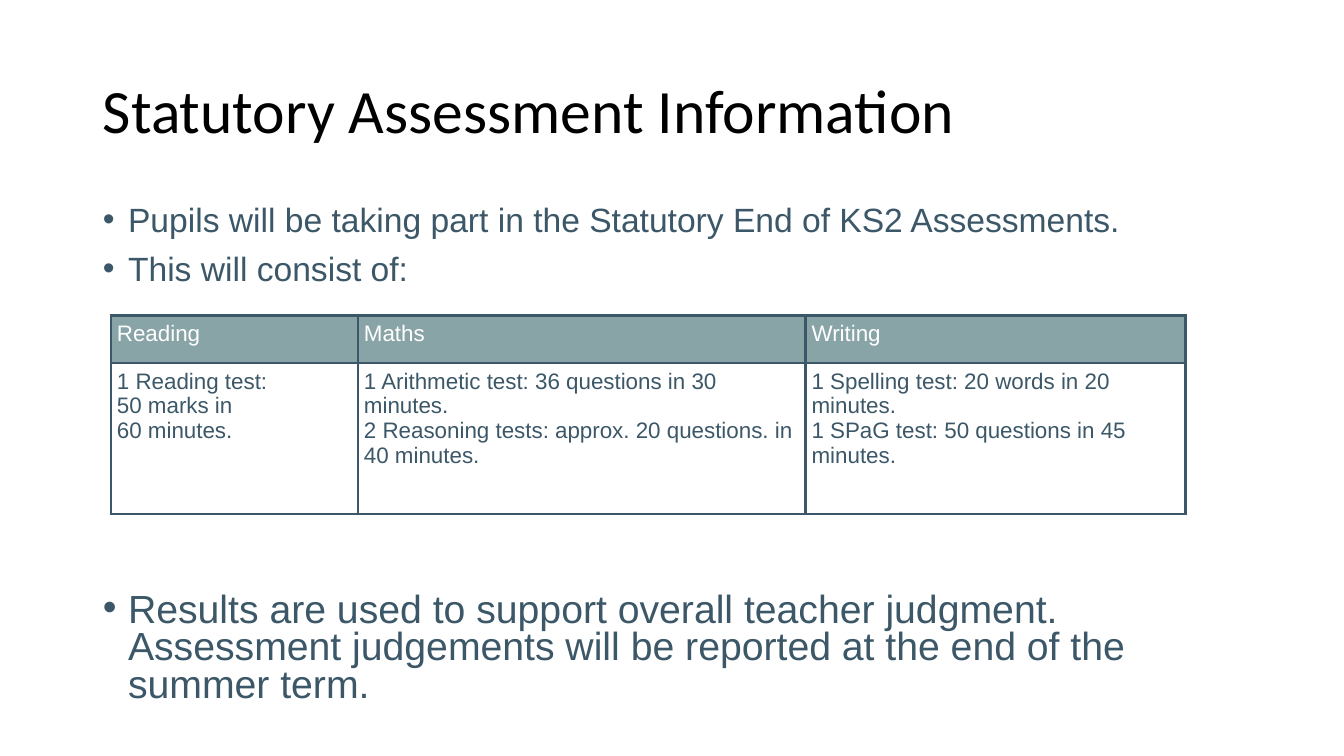
from lxml.etree import SubElement
from pptx import Presentation
from pptx.dml.color import RGBColor
from pptx.enum.text import MSO_ANCHOR, MSO_AUTO_SIZE, PP_ALIGN
from pptx.oxml.ns import qn
from pptx.util import Emu, Pt

EMU_PER_PX = 9144
BLACK = RGBColor(0x00, 0x00, 0x00)
WHITE = RGBColor(0xFF, 0xFF, 0xFF)
SLATE = RGBColor(0x3C, 0x58, 0x68)
SAGE = RGBColor(0x89, 0xA4, 0xA7)

TITLE = "Statutory Assessment Information"
BULLETS = [
    ("Pupils will be taking part in the Statutory End of KS2 Assessments.", 24, 12),
    ("This will consist of:", 24, 12),
    ("Results are used to support overall teacher judgment. Assessment judgements "
     "will be reported at the end of the summer term.", 28, 218),
]
SUBJECTS = [
    ("Reading", 245, ["1 Reading test:", "50 marks in", "60 minutes."]),
    ("Maths", 444, ["1 Arithmetic test: 36 questions in 30 minutes.",
                    "2 Reasoning tests: approx. 20 questions. in 40 minutes."]),
    ("Writing", 377, ["1 Spelling test: 20 words in 20 minutes.",
                      "1 SPaG test: 50 questions in 45 minutes."]),
]
ROW_HEIGHTS = [47, 150]


def px(length):
    return Emu(length * EMU_PER_PX)


def place(placeholder, left, top, width, height):
    placeholder.left, placeholder.top = px(left), px(top)
    placeholder.width, placeholder.height = px(width), px(height)
    placeholder.text_frame.auto_size = MSO_AUTO_SIZE.NONE


def add_run(paragraph, text, size, color, font="Arial"):
    run = paragraph.add_run()
    run.text = text
    run.font.name = font
    run.font.size = Pt(size)
    run.font.bold = False
    run.font.color.rgb = color


def write_title(title):
    place(title, 92, 40, 1150, 145)
    title.text_frame.vertical_anchor = MSO_ANCHOR.MIDDLE
    heading = title.text_frame.paragraphs[0]
    heading.alignment = PP_ALIGN.LEFT
    heading.line_spacing = 0.9
    add_run(heading, TITLE, 44, BLACK, "Calibri")


def write_bullets(body):
    place(body, 92, 200, 1150, 476)
    frame = body.text_frame
    for index, (text, size, space_before) in enumerate(BULLETS):
        bullet = frame.add_paragraph() if index else frame.paragraphs[0]
        bullet.line_spacing = 0.8
        bullet.space_before = Pt(space_before)
        properties = bullet._p.get_or_add_pPr()
        properties.set("marL", str(px(25)))
        properties.set("indent", str(px(-25)))
        SubElement(properties, qn("a:buFont"), typeface="Arial")
        SubElement(properties, qn("a:buChar"), char="•")
        add_run(bullet, text, size, SLATE)


def add_borders(cell):
    properties = cell._tc.get_or_add_tcPr()
    for side in ("lnL", "lnR", "lnT", "lnB"):
        border = SubElement(properties, qn(f"a:{side}"), w=str(Pt(2)))
        paint = SubElement(border, qn("a:solidFill"))
        SubElement(paint, qn("a:srgbClr"), val=str(SLATE))


def write_cell(cell, lines, color, fill=None):
    cell.margin_left = cell.margin_right = px(6)
    cell.margin_top = cell.margin_bottom = px(6)
    cell.vertical_anchor = MSO_ANCHOR.TOP
    add_borders(cell)
    if fill is None:
        cell.fill.background()
    else:
        cell.fill.solid()
        cell.fill.fore_color.rgb = fill
    paragraph = cell.text_frame.paragraphs[0]
    for index, line in enumerate(lines):
        if index:
            paragraph.add_line_break()
        add_run(paragraph, line, 16, color)


def add_test_table(slide):
    width = sum(subject_width for _, subject_width, _ in SUBJECTS)
    table = slide.shapes.add_table(len(ROW_HEIGHTS), len(SUBJECTS), px(110), px(313),
                                   px(width), px(sum(ROW_HEIGHTS))).table
    table.horz_banding = False
    for row, height in zip(table.rows, ROW_HEIGHTS):
        row.height = px(height)
    for column, (subject, subject_width, tests) in enumerate(SUBJECTS):
        table.columns[column].width = px(subject_width)
        write_cell(table.cell(0, column), [subject], WHITE, SAGE)
        write_cell(table.cell(1, column), tests, SLATE)


def main():
    deck = Presentation()
    deck.slide_width, deck.slide_height = px(1333), px(750)
    slide = deck.slides.add_slide(deck.slide_layouts[1])
    write_title(slide.shapes.title)
    write_bullets(slide.placeholders[1])
    add_test_table(slide)
    deck.save("out.pptx")


if __name__ == "__main__":
    main()
